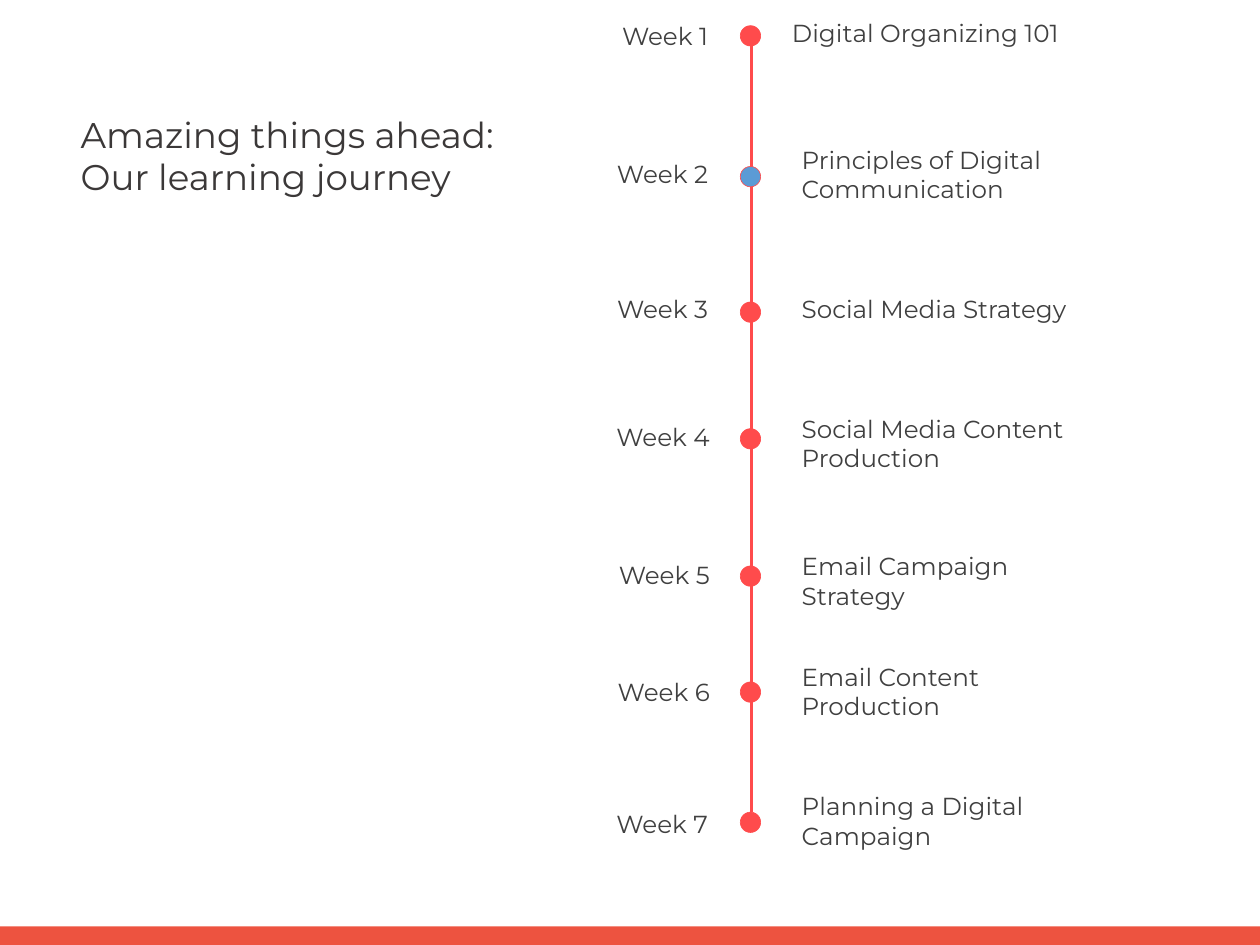
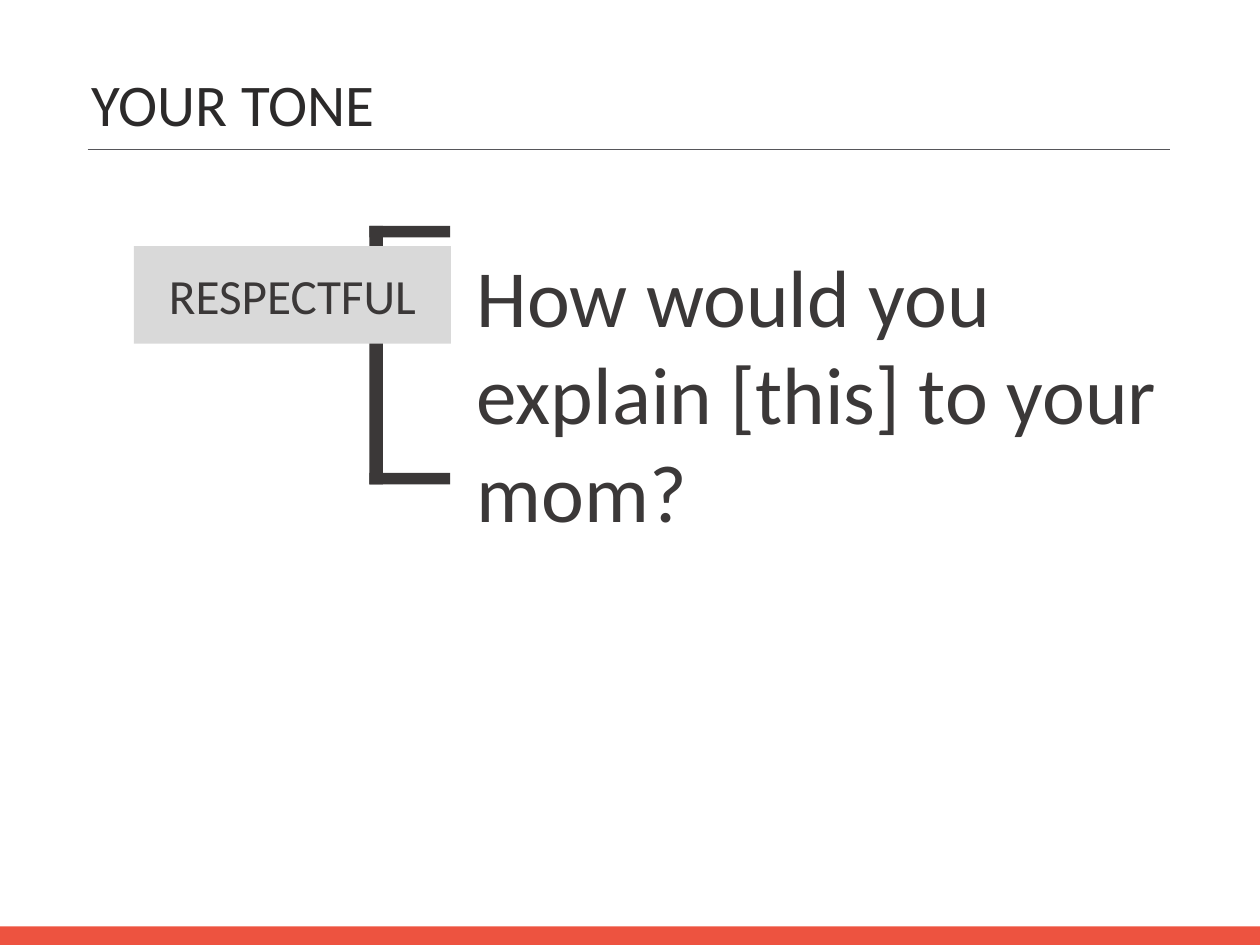
"""Build a two-slide deck: a learning timeline and a note on tone."""
from pptx import Presentation
from pptx.dml.color import RGBColor
from pptx.enum.shapes import MSO_CONNECTOR, MSO_SHAPE as Shape
from pptx.enum.text import MSO_ANCHOR as Anchor, PP_ALIGN as Align
from pptx.oxml.ns import qn
from pptx.util import Inches, Pt
from lxml.etree import SubElement

WIDTH, HEIGHT = 14.22, 10.67
BAND = RGBColor(0xED, 0x53, 0x40)
CORAL = RGBColor(0xFF, 0x4B, 0x4C)
BLUE = RGBColor(0x5B, 0x9B, 0xD5)
CHARCOAL = RGBColor(0x3B, 0x38, 0x38)
INK = RGBColor(0x2C, 0x2A, 0x2A)
GREY = RGBColor(0x40, 0x40, 0x40)
RULE = RGBColor(0x56, 0x56, 0x5A)
PALE = RGBColor(0xD9, 0xD9, 0xD9)
SANS, ROUND = "Calibri", "Montserrat"

JOURNEY_TITLE = ["Amazing things ahead:", "Our learning journey"]
# topic, dot top, label (left, top), topic (left, top)
WEEKS = [
    ("Digital Organizing 101", 0.29, (5.36, 0.02), (8.84, -0.02)),
    ("Principles of Digital Communication", 1.88, (5.36, 1.58), (8.95, 1.58)),
    ("Social Media Strategy", 3.41, (5.36, 3.1), (8.95, 3.1)),
    ("Social Media Content Production", 4.84, (5.38, 4.54), (8.95, 4.62)),
    ("Email Campaign Strategy", 6.39, (5.38, 6.1), (8.95, 6.17)),
    ("Email Content Production", 7.7, (5.38, 7.42), (8.95, 7.42)),
    ("Planning a Digital Campaign", 9.17, (5.36, 8.92), (8.95, 8.88)),
]
CURRENT_WEEK = 2
ROW_HEIGHT, LABEL_WIDTH, TOPIC_WIDTH = 0.77, 2.73, 3.66
AXIS, DOT = 8.47, 0.23

TONE_TITLE = "YOUR TONE"
TONE_WORD = "RESPECTFUL"
TONE_QUESTION = "How would you explain [this] to your mom?"
BRACKET_LEFT, BRACKET_TOP, BRACKET_HEIGHT = 4.17, 2.55, 2.92
ARM_WIDTH, ARM_HEIGHT, STEM_WIDTH = 0.91, 0.13, 0.15


def place(left, top, width, height):
    return [Inches(value) for value in (left, top, width, height)]


def write(box, lines, font, size, color, align=Align.LEFT,
          anchor=Anchor.TOP, insets=(0.1, 0.05)):
    frame = box.text_frame
    frame.word_wrap = True
    frame.vertical_anchor = anchor
    frame.margin_left = frame.margin_right = Inches(insets[0])
    frame.margin_top = frame.margin_bottom = Inches(insets[1])
    for index, line in enumerate(lines):
        para = frame.add_paragraph() if index else frame.paragraphs[0]
        para.alignment = align
        span = para.add_run()
        span.text = line
        span.font.name = font
        span.font.size = Pt(size)
        span.font.color.rgb = color


def add_text(page, area, lines, *style, **options):
    write(page.shapes.add_textbox(*place(*area)), lines, *style, **options)


def add_block(page, area, fill, kind=Shape.RECTANGLE, outline=None):
    block = page.shapes.add_shape(kind, *place(*area))
    block.shadow.inherit = False
    block.fill.solid()
    block.fill.fore_color.rgb = fill
    if outline is None:
        block.line.fill.background()
    else:
        block.line.color.rgb = outline
        block.line.width = Pt(0.5)
    return block


def add_line(page, start, end, color, weight):
    line = page.shapes.add_connector(
        MSO_CONNECTOR.STRAIGHT, *place(*start, *end))
    line.line.color.rgb = color
    line.line.width = Pt(weight)
    SubElement(line._element.spPr, qn("a:effectLst"))


def add_page(deck):
    page = deck.slides.add_slide(deck.slide_layouts[6])
    add_block(page, (0, 10.46, WIDTH, HEIGHT - 10.46), BAND)
    return page


def build_journey(deck):
    page = add_page(deck)
    add_text(page, (0.84, 1.24, 5.07, 1.04), JOURNEY_TITLE, ROUND, 29,
             CHARCOAL, insets=(0.07, 0.03))
    add_line(page, (AXIS + 0.01, WEEKS[0][1]), (AXIS + 0.01, WEEKS[-1][1]),
             CORAL, 3)
    for week, (topic, dot_top, label_at, topic_at) in enumerate(WEEKS, 1):
        fill = BLUE if week == CURRENT_WEEK else CORAL
        add_block(page, (AXIS - DOT / 2, dot_top, DOT, DOT), fill,
                  Shape.OVAL, CORAL)
        add_text(page, (*label_at, LABEL_WIDTH, ROW_HEIGHT), [f"Week {week}"],
                 ROUND, 20, GREY, align=Align.RIGHT, anchor=Anchor.MIDDLE)
        add_text(page, (*topic_at, TOPIC_WIDTH, ROW_HEIGHT), [topic],
                 ROUND, 20, GREY, anchor=Anchor.MIDDLE)


def build_tone(deck):
    page = add_page(deck)
    add_text(page, (0.94, 0.8, 11.13, 0.72), [TONE_TITLE], SANS, 48, INK,
             anchor=Anchor.MIDDLE)
    add_line(page, (0.99, 1.69), (13.2, 1.69), RULE, 1)
    add_text(page, (5.31, 2.71, 8.4, 3.5), [TONE_QUESTION], SANS, 66,
             CHARCOAL, insets=(0.07, 0.07))
    add_block(page, (BRACKET_LEFT, BRACKET_TOP, STEM_WIDTH, BRACKET_HEIGHT),
              CHARCOAL)
    for top in (BRACKET_TOP, BRACKET_TOP + BRACKET_HEIGHT - ARM_HEIGHT):
        add_block(page, (BRACKET_LEFT, top, ARM_WIDTH, ARM_HEIGHT), CHARCOAL)
    tag = add_block(page, (1.51, 2.78, 3.58, 1.1), PALE)
    write(tag, [TONE_WORD], SANS, 40, CHARCOAL, align=Align.CENTER,
          anchor=Anchor.MIDDLE, insets=(0.3, 0.05))


def main():
    deck = Presentation()
    deck.slide_width, deck.slide_height = Inches(WIDTH), Inches(HEIGHT)
    build_journey(deck)
    build_tone(deck)
    deck.save("out.pptx")


if __name__ == "__main__":
    main()
